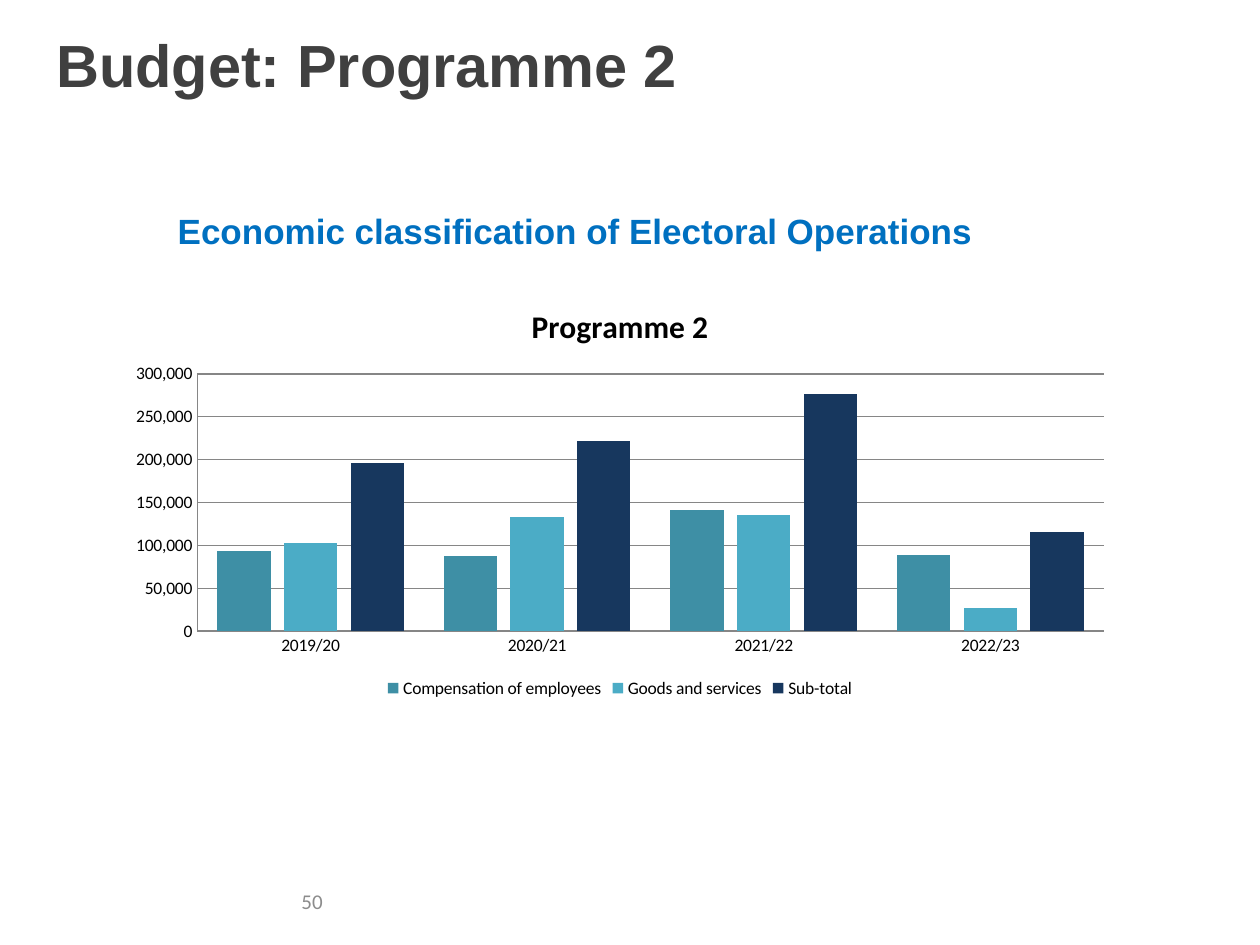
import pptx
import pptx.util
import pptx.chart.data
import pptx.dml.color
import pptx.enum.chart
import pptx.enum.text

Pt = pptx.util.Pt
RGB = pptx.dml.color.RGBColor.from_string
kinds = pptx.enum.chart
Align = pptx.enum.text.PP_ALIGN
Anchor = pptx.enum.text.MSO_ANCHOR

theme = {
    "head": {"name": "Arial", "size": Pt(34), "bold": True, "color": "404040"},
    "sub": {"name": "Arial", "size": Pt(20), "bold": True, "color": "0070C0"},
    "page": {"name": "Calibri", "size": Pt(12), "bold": False, "color": "8C8C8C"},
    "chart": {"name": "Calibri", "size": Pt(10), "bold": False, "color": "000000"},
    "title": {"name": "Calibri", "size": Pt(18), "bold": True, "color": "000000"},
    "bars": ["3E8FA5", "4BACC6", "17375E"],
    "rule": "868686",
}

deck = pptx.Presentation()
deck.slide_width = pptx.util.Inches(10)
deck.slide_height = pptx.util.Inches(7.5)
slide = deck.slides.add_slide(deck.slide_layouts[6])


def place(*box):
    sides = (deck.slide_width, deck.slide_height) * 2
    return [int(side * part / 100) for side, part in zip(sides, box)]


def style(font, look):
    for key, value in theme[look].items():
        if key == "color":
            font.color.rgb = RGB(value)
        else:
            setattr(font, key, value)


texts = [
    ("Budget: Programme 2", "head", (3.5, 2.27, 72.5, 8.93), Align.LEFT, Anchor.TOP),
    ("Economic classification of Electoral Operations", "sub",
     (11.7, 21.47, 67.9, 10.27), Align.CENTER, Anchor.TOP),
    ("50", "page", (3.3, 92.67, 23.3, 5.33), Align.RIGHT, Anchor.MIDDLE),
]
for words, look, box, align, anchor in texts:
    frame = slide.shapes.add_textbox(*place(*box)).text_frame
    for key, value in {"word_wrap": True, "vertical_anchor": anchor}.items():
        setattr(frame, key, value)
    para = frame.paragraphs[0]
    para.alignment = align
    run = para.add_run()
    run.text = words
    style(run.font, look)

data = pptx.chart.data.CategoryChartData(number_format="#,##0")
data.categories = ["2019/20", "2020/21", "2021/22", "2022/23"]
rows = {
    "Compensation of employees": [93000, 88000, 141000, 89000],
    "Goods and services": [103000, 133000, 135000, 27000],
    "Sub-total": [196000, 222000, 277000, 116000],
}
for name, sums in rows.items():
    data.add_series(name, sums)

chart = slide.shapes.add_chart(
    kinds.XL_CHART_TYPE.COLUMN_CLUSTERED, *place(9.2, 30, 80, 44.4), data).chart
style(chart.font, "chart")
chart.has_title = True
title = chart.chart_title.text_frame
title.text = "Programme 2"
style(title.paragraphs[0].runs[0].font, "title")

chart.has_legend = True
legend = {"position": kinds.XL_LEGEND_POSITION.BOTTOM, "include_in_layout": False}
for key, value in legend.items():
    setattr(chart.legend, key, value)

plot = chart.plots[0]
for key, value in {"gap_width": 75, "overlap": -25, "vary_by_categories": False}.items():
    setattr(plot, key, value)
for bar, color in zip(plot.series, theme["bars"]):
    bar.format.fill.solid()
    bar.format.fill.fore_color.rgb = RGB(color)
    bar.invert_if_negative = False

scale = chart.value_axis
limits = {"minimum_scale": 0, "maximum_scale": 300000, "major_unit": 50000,
          "has_major_gridlines": True}
for key, value in limits.items():
    setattr(scale, key, value)
scale.tick_labels.number_format = "#,##0"
scale.tick_labels.number_format_is_linked = False
for axis in (scale, chart.category_axis):
    axis.major_tick_mark = kinds.XL_TICK_MARK.NONE
    axis.minor_tick_mark = kinds.XL_TICK_MARK.NONE
for part in (scale, chart.category_axis, scale.major_gridlines):
    part.format.line.color.rgb = RGB(theme["rule"])
    part.format.line.width = Pt(0.75)

deck.save("out.pptx")
